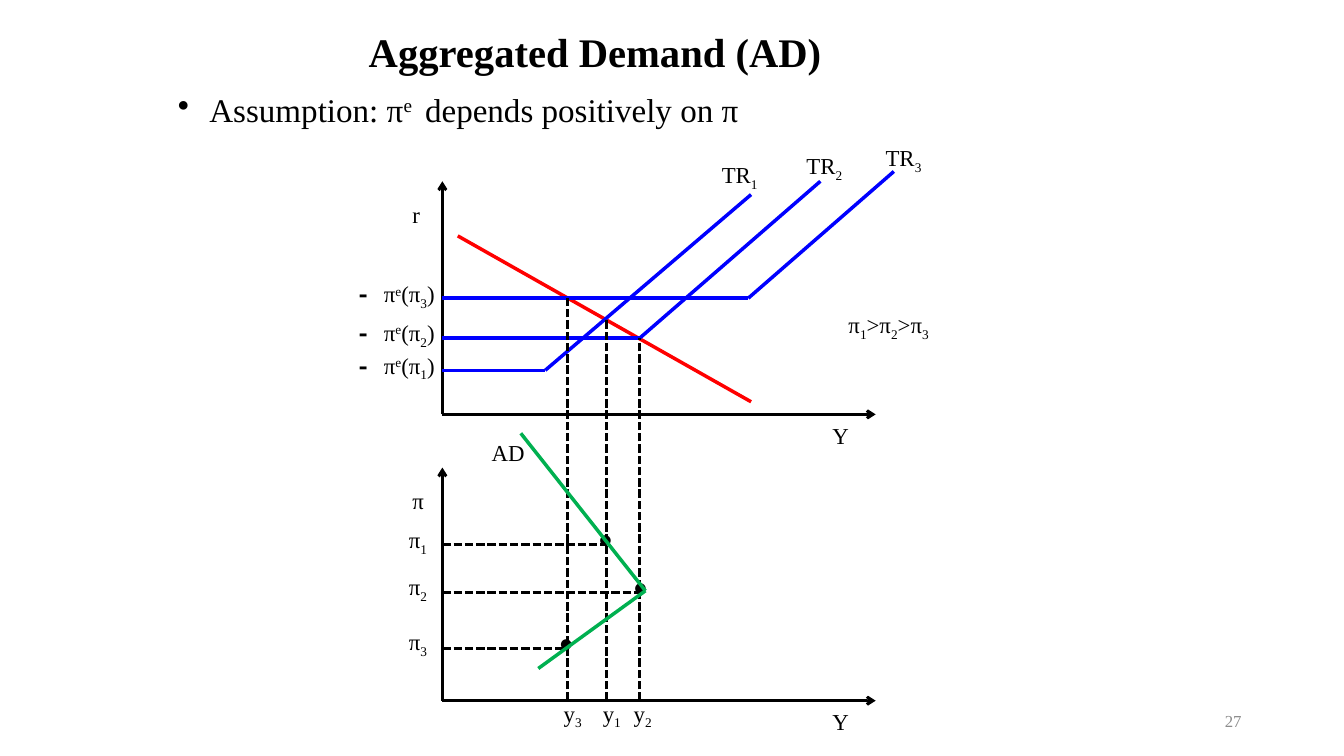
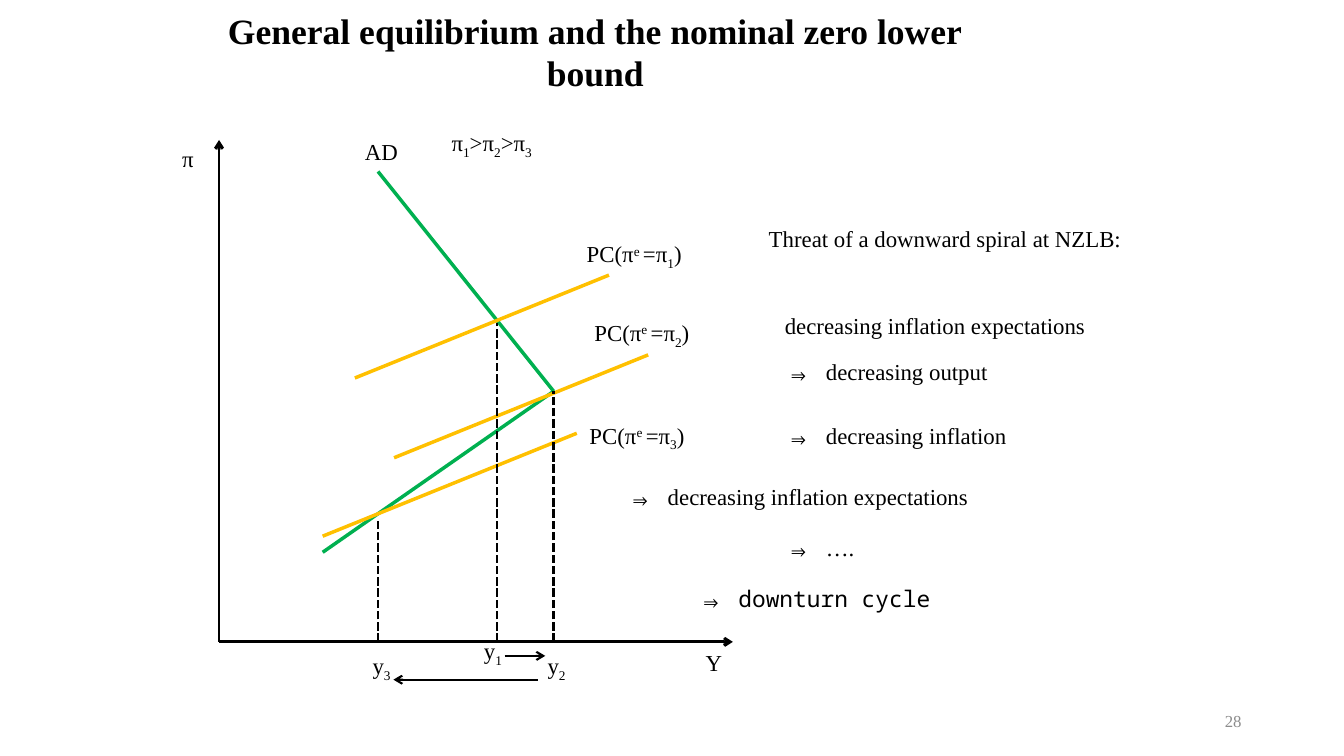
from lxml import etree
from pptx import Presentation
from pptx.dml.color import RGBColor
from pptx.enum.dml import MSO_LINE
from pptx.enum.shapes import MSO_CONNECTOR
from pptx.enum.text import MSO_ANCHOR, PP_ALIGN
from pptx.oxml.ns import qn
from pptx.util import Pt

STRAIGHT = MSO_CONNECTOR.STRAIGHT
DASH = MSO_LINE.SQUARE_DOT
MIDDLE = MSO_ANCHOR.MIDDLE
LEFT, CENTER, RIGHT = PP_ALIGN.LEFT, PP_ALIGN.CENTER, PP_ALIGN.RIGHT

COLORS = {
    "ink": "000000",
    "number": "8C8C8C",
    "rule": "0000FF",
    "spending": "FF0000",
    "demand": "00B050",
    "phillips": "FFC000",
}
SERIF, MONO, DOT_FONT = "Times New Roman", "Noto Sans Mono", "Calibri"
LABEL_SIZE, LABEL_HEIGHT = 16.3, 27.5
BASELINES = {"_": "-25000", "^": "30000"}
INFLATION_ORDER = "π_1>π_2>π_3"


# Text: "_" lowers and "^" raises the character that follows
def add_marked_runs(paragraph, text):
    pieces, mark = [], ""
    for char in text:
        if char in BASELINES:
            mark = char
            continue
        if pieces and pieces[-1][0] == mark:
            pieces[-1][1] += char
        else:
            pieces.append([mark, char])
        mark = ""
    for mark, piece in pieces:
        run = paragraph.add_run()
        run.text = piece
        if mark:
            run._r.get_or_add_rPr().set("baseline", BASELINES[mark])


def add_text(slide, at, width, text, height=LABEL_HEIGHT, size=LABEL_SIZE,
             font=SERIF, color="ink", bold=False, align=LEFT, anchor=None,
             lead="", lead_bold=False):
    box = slide.shapes.add_textbox(Pt(at[0]), Pt(at[1]), Pt(width), Pt(height))
    frame = box.text_frame
    frame.word_wrap = True
    if anchor is not None:
        frame.vertical_anchor = anchor
    paragraph = frame.paragraphs[0]
    paragraph.alignment = align
    paragraph.font.name = font
    paragraph.font.size = Pt(size)
    paragraph.font.bold = bold
    paragraph.font.color.rgb = RGBColor.from_string(COLORS[color])
    if lead:
        opening = paragraph.add_run()
        opening.text = lead
        opening.font.name = MONO
        opening.font.bold = lead_bold
    add_marked_runs(paragraph, text)
    return paragraph


def add_bullet(paragraph, indent):
    properties = paragraph._p.get_or_add_pPr()
    properties.set("marL", str(Pt(indent)))
    properties.set("indent", str(-Pt(indent)))
    bullet = etree.Element(qn("a:buChar"), char="•")
    properties.insert(0, bullet)


# Lines
def add_line(slide, start, end, color="ink", width=2, dashed=False, arrow=False):
    connector = slide.shapes.add_connector(
        STRAIGHT, Pt(start[0]), Pt(start[1]), Pt(end[0]), Pt(end[1]))
    connector.line.color.rgb = RGBColor.from_string(COLORS[color])
    connector.line.width = Pt(width)
    if dashed:
        connector.line.dash_style = DASH
    properties = connector._element.spPr
    if arrow:
        etree.SubElement(properties.find(qn("a:ln")), qn("a:tailEnd"), type="arrow")
    etree.SubElement(properties, qn("a:effectLst"))


def add_curve(slide, color, *points):
    for start, end in zip(points, points[1:]):
        add_line(slide, start, end, color, 2.5)


def add_guide(slide, start, end):
    add_line(slide, start, end, dashed=True)


def add_axes(slide, origin, top, right, name, name_at, output_x):
    x, base = origin
    add_line(slide, origin, (x, top), arrow=True)
    add_line(slide, origin, (right, base), arrow=True)
    add_text(slide, name_at, 24, name)
    add_text(slide, (output_x, base + 1.5), 28, "Y")


# Shared frame of both slides
def add_slide(prs, title, title_size, number):
    slide = prs.slides.add_slide(prs.slide_layouts[6])
    add_text(slide, (126, 7.5), 598.5, title, 58.5, title_size,
             bold=True, align=CENTER, anchor=MIDDLE)
    add_text(slide, (678, 500.5), 216, number, 29, 12,
             color="number", align=RIGHT, anchor=MIDDLE)
    return slide


def build_aggregate_demand(prs):
    slide = add_slide(prs, "Aggregated Demand (AD)", 29, "27")
    assumption = add_text(slide, (120, 60.5), 723, "Assumption: π^e^  depends positively on π",
                          36, 23.6)
    add_bullet(assumption, 22.5)

    # Both panels share the vertical axis position
    axis_x, lower_base = 316, 500.5
    for name, base in (("r", 296), ("π", lower_base)):
        add_axes(slide, (axis_x, base), base - 166.5, 625.5, name,
                 (287.5, base - 156.5), 587.5)

    # Interest rate rules: floor, kink, end, floor label top, rule label
    rules = [
        (264.5, 389.5, (536.5, 139), 247.5, (508.5, 111.5)),
        (241.5, 457, (586, 129.5), 224, (569, 105)),
        (213, 534.5, (638.5, 122.5), 196.5, (625.5, 99)),
    ]
    add_curve(slide, "spending", (327, 168.5), (536.5, 287))
    for i, (floor, kink_x, end, floor_label_y, rule_label) in enumerate(rules, 1):
        add_curve(slide, "rule", (axis_x, floor), (kink_x, floor), end)
        add_text(slide, (247.5, floor_label_y), 84, f"π^e(π_{i})", lead="- ", lead_bold=True)
        add_text(slide, rule_label, 53, f"TR_{i}")
    add_text(slide, (599, 218.5), 91, INFLATION_ORDER)

    # Equilibria: output, top of its guide, inflation, label positions, dot
    equilibria = [
        (433.5, 227.5, 389, 372, 423.5, (420.5, 371.5)),
        (457, 241.5, 423.5, 405.5, 445.5, (445.5, 405.5)),
        (405.5, 213, 463, 445, 395.5, (392.5, 445.5)),
    ]
    for i, (output, top, inflation, label_y, label_x, dot) in enumerate(equilibria, 1):
        add_guide(slide, (output, lower_base), (output, top))
        add_guide(slide, (axis_x, inflation), (output, inflation))
        add_text(slide, (285, label_y), 36, f"π_{i}")
        add_text(slide, (label_x, 496), 34, f"y_{i}")
        add_text(slide, dot, 26, "●", font=DOT_FONT)

    # Demand curve
    add_curve(slide, "demand", (372, 309.5), (461, 422), (384.5, 477.5))
    add_text(slide, (344, 309.5), 40, "AD")


def build_general_equilibrium(prs):
    slide = add_slide(prs, "General equilibrium and the nominal zero lower bound", 25.4, "28")
    base = 458.5
    add_axes(slide, (156.5, base), 100, 523.5, "π", (123, 100), 497)
    add_text(slide, (315.5, 88.5), 91, INFLATION_ORDER)

    # Demand curve and parallel Phillips curves
    add_curve(slide, "demand", (270, 122.5), (395.5, 279.5), (230.5, 394.5))
    add_text(slide, (253.5, 94.5), 40, "AD")
    phillips = [
        ((253.5, 270), (412, 168)),
        ((281.5, 327), (417.5, 224)),
        ((230.5, 383), (414, 297.5)),
    ]
    for i, ((x, y), label) in enumerate(phillips, 1):
        add_curve(slide, "phillips", (x, y), (x + 181.5, y - 73.5))
        add_text(slide, label, 88, f"PC(π^e^ =π_{i})")

    # Output levels and the moves between them
    outputs = [
        (355, 230.5, (338.5, 451.5)),
        (395.5, 279.5, (384, 462)),
        (270, 370, (259, 462)),
    ]
    for i, (output, top, label) in enumerate(outputs, 1):
        add_guide(slide, (output, base), (output, top))
        add_text(slide, label, 34, f"y_{i}")
    add_line(slide, (360.5, 468.5), (389.5, 468.5), width=1.5, arrow=True)
    add_line(slide, (384, 485.5), (281, 485.5), width=1.5, arrow=True)

    # Downward spiral
    add_text(slide, (542, 157), 289.5, "Threat of a downward spiral at NZLB:")
    spiral = [
        (553.5, 219, "", "decreasing inflation expectations"),
        (553.5, 252, "⇒ ", "decreasing output"),
        (553.5, 297.5, "⇒ ", "decreasing inflation"),
        (440.5, 341.5, "⇒ ", "decreasing inflation expectations"),
        (553.5, 378, "⇒ ", "…."),
        (491, 414, "⇒ downturn cycle", ""),
    ]
    for x, y, lead, text in spiral:
        add_text(slide, (x, y), 278, text, lead=lead)


def main():
    prs = Presentation()
    prs.slide_width, prs.slide_height = Pt(960), Pt(540)
    build_aggregate_demand(prs)
    build_general_equilibrium(prs)
    prs.save("out.pptx")


if __name__ == "__main__":
    main()
